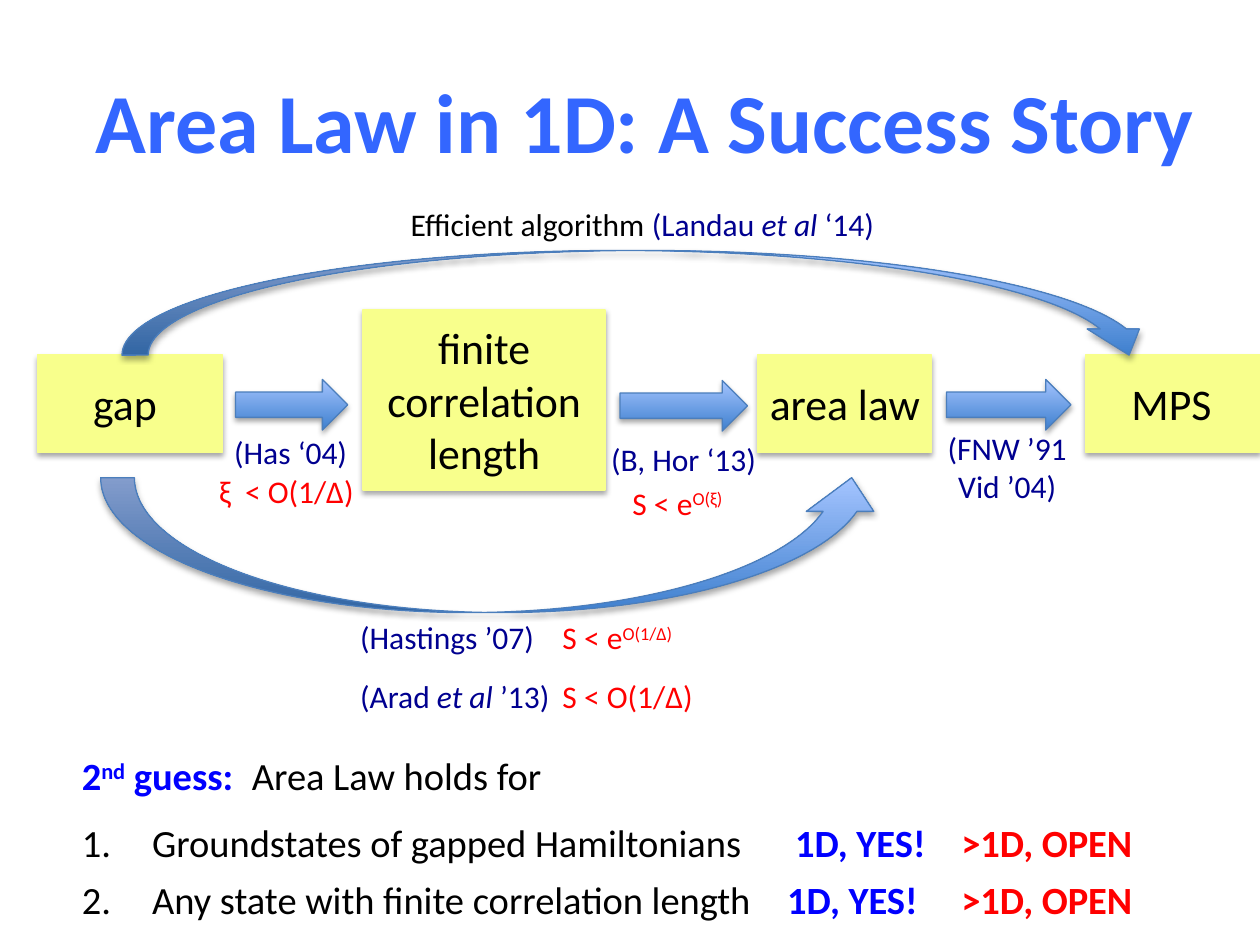
from dataclasses import dataclass

from lxml.etree import SubElement
from pptx import Presentation
from pptx.dml.color import RGBColor
from pptx.enum.shapes import MSO_SHAPE
from pptx.enum.text import MSO_ANCHOR, PP_ALIGN
from pptx.oxml.ns import qn
from pptx.util import Cm, Pt

FONT = "Calibri"
BLACK, NAVY, BLUE, RED = "000000", "000090", "0000FF", "FF0000"
SKY, YELLOW, EDGE = "3366FF", "F8FF8C", "4B7EBC"
DARK, LIGHT = "3F80CE", "A4C4FF"


@dataclass
class Area:
    left: float
    top: float
    width: float
    height: float

    def cm(self) -> list:
        return [Cm(n) for n in (self.left, self.top, self.width, self.height)]


@dataclass
class Run:
    text: str
    color: str = BLACK
    bold: bool = False
    ital: bool = False
    sup: bool = False


@dataclass
class Para:
    runs: list[Run]
    gap: float = 0  # points above
    tabs: tuple[float, ...] = ()  # cm from the left inset
    num: int = 0  # list number, 0 for none


@dataclass
class Note:
    area: Area
    paras: list[Para]
    size: float = 18
    mid: bool = False


@dataclass
class Box:
    area: Area
    label: Area
    lines: list[str]
    mid: bool = False


@dataclass
class Arrow:
    area: Area
    kind: MSO_SHAPE = MSO_SHAPE.RIGHT_ARROW


def rgb(code: str) -> RGBColor:
    return RGBColor.from_string(code)


def fill_para(para, data: Para, size: float) -> None:
    if data.gap:
        para.space_before = Pt(data.gap)
    props = para._p.get_or_add_pPr()
    if data.num:
        props.set("marL", str(Cm(1.42)))
        props.set("indent", str(Cm(-1.42)))
        SubElement(props, qn("a:buFont"), typeface="+mj-lt")
        SubElement(props, qn("a:buAutoNum"), type="arabicPeriod",
                   startAt=str(data.num))
    if data.tabs:
        stops = SubElement(props, qn("a:tabLst"))
        for pos in data.tabs:
            SubElement(stops, qn("a:tab"), pos=str(Cm(pos)), algn="l")
    for part in data.runs:
        run = para.add_run()
        run.text = part.text
        font = run.font
        font.name, font.size = FONT, Pt(size)
        font.bold, font.italic = part.bold, part.ital
        font.color.rgb = rgb(part.color)
        if part.sup:
            run._r.get_or_add_rPr().set("baseline", "30000")


def add_note(slide, note: Note) -> None:
    frame = slide.shapes.add_textbox(*note.area.cm()).text_frame
    frame.word_wrap = True
    for i, data in enumerate(note.paras):
        para = frame.add_paragraph() if i else frame.paragraphs[0]
        para.alignment = PP_ALIGN.CENTER if note.mid else PP_ALIGN.LEFT
        fill_para(para, data, note.size)


def add_box(slide, box: Box) -> None:
    """Draw a yellow box with its label; the theme gives the soft shadow."""
    rect = slide.shapes.add_shape(MSO_SHAPE.RECTANGLE, *box.area.cm())
    rect.fill.solid()
    rect.fill.fore_color.rgb = rgb(YELLOW)
    rect.line.color.rgb = rgb(YELLOW)
    rect.line.width = Pt(0.75)
    paras = [Para([Run(line)]) for line in box.lines]
    add_note(slide, Note(box.label, paras, 25, box.mid))


def add_arrow(slide, arrow: Arrow) -> None:
    shape = slide.shapes.add_shape(arrow.kind, *arrow.area.cm())
    shape.fill.gradient()
    shape.fill.gradient_angle = 90
    for stop, code in zip(shape.fill.gradient_stops, (DARK, LIGHT)):
        stop.color.rgb = rgb(code)
    shape.line.color.rgb = rgb(EDGE)
    shape.line.width = Pt(0.75)


def add_title(slide, text: str) -> None:
    title = slide.shapes.title
    title.left, title.top, title.width, title.height = Area(
        0.43, 0, 25.17, 4.85).cm()
    title.text_frame.vertical_anchor = MSO_ANCHOR.MIDDLE
    para = title.text_frame.paragraphs[0]
    para.alignment = PP_ALIGN.CENTER
    fill_para(para, Para([Run(text, SKY, bold=True)]), 48)


BOXES = [
    Box(Area(0.76, 7.16, 3.73, 1.96), Area(1.63, 7.47, 1.98, 1.32), ["gap"]),
    Box(Area(7.32, 6.25, 4.88, 3.63), Area(7.32, 6.35, 4.88, 3.45),
        ["finite", "correlation", "length"], mid=True),
    Box(Area(15.27, 7.16, 3.51, 1.96), Area(15.27, 7.47, 3.81, 1.32),
        ["area law"]),
    Box(Area(21.89, 7.16, 3.51, 1.96), Area(22.56, 7.47, 2.57, 1.32), ["MPS"]),
]

ARROWS = [
    Arrow(Area(4.75, 7.65, 2.26, 1.02)),
    Arrow(Area(12.5, 7.67, 2.57, 1.02)),
    Arrow(Area(19.08, 7.65, 2.51, 1.02)),
    Arrow(Area(2.46, 5.05, 20.83, 2.11), MSO_SHAPE.CURVED_DOWN_ARROW),
    Arrow(Area(2.03, 9.63, 15.82, 2.72), MSO_SHAPE.CURVED_UP_ARROW),
]

STATUS = [Run("\t"), Run("1D, YES!", BLUE, bold=True), Run("\t"),
          Run(">1D, OPEN", RED, bold=True)]

NOTES = [
    Note(Area(8.03, 4.01, 11.53, 1.02), [Para([
        Run("Efficient algorithm "), Run("(Landau ", NAVY),
        Run("et al ", NAVY, ital=True), Run("‘14)", NAVY)])]),
    Note(Area(4.47, 8.61, 3.56, 1.02), [Para([Run("(Has ‘04)", NAVY)])]),
    Note(Area(4.17, 9.4, 3.4, 1.02),
         [Para([Run("ξ\t< O(1/Δ)", RED)], tabs=(0.52,))]),
    Note(Area(12.07, 8.74, 3.71, 1.02), [Para([Run("(B, Hor ‘13)", NAVY)])]),
    Note(Area(12.5, 9.63, 3.4, 1.02),
         [Para([Run("S < e", RED), Run("O(ξ)", RED, sup=True)])]),
    Note(Area(18.36, 8.53, 3.89, 1.8),
         [Para([Run("(FNW ’91", NAVY)]), Para([Run("Vid ’04)", NAVY)])],
         mid=True),
    Note(Area(7.01, 12.34, 8.05, 2.24), [
        Para([Run("(Hastings ’07)\t", NAVY), Run("S < e", RED),
              Run("O(1/Δ)", RED, sup=True)], tabs=(4.08,)),
        Para([Run("(Arad ", NAVY), Run("et al ", NAVY, ital=True),
              Run("’13)\t", NAVY), Run("S < O(1/Δ)", RED)], 12, (4.08,))]),
    Note(Area(1.4, 15.04, 25.17, 5.64), [
        Para([Run("2", BLUE, bold=True), Run("nd", BLUE, bold=True, sup=True),
              Run(" guess:\t", BLUE, bold=True), Run("Area Law holds for")],
             tabs=(3.43,)),
        Para([Run("Groundstates of gapped Hamiltonians"), *STATUS],
             12, (14.38, 17.73), 1),
        Para([Run("Any state with finite correlation length"), *STATUS],
             6, (14.22, 17.73), 2)], 22),
]


def main() -> None:
    deck = Presentation()
    deck.slide_width, deck.slide_height = Cm(25.4), Cm(19.05)
    slide = deck.slides.add_slide(deck.slide_layouts[5])
    add_title(slide, "Area Law in 1D: A Success Story")
    for box in BOXES:
        add_box(slide, box)
    for arrow in ARROWS:
        add_arrow(slide, arrow)
    for note in NOTES:
        add_note(slide, note)
    deck.save("out.pptx")


if __name__ == "__main__":
    main()
